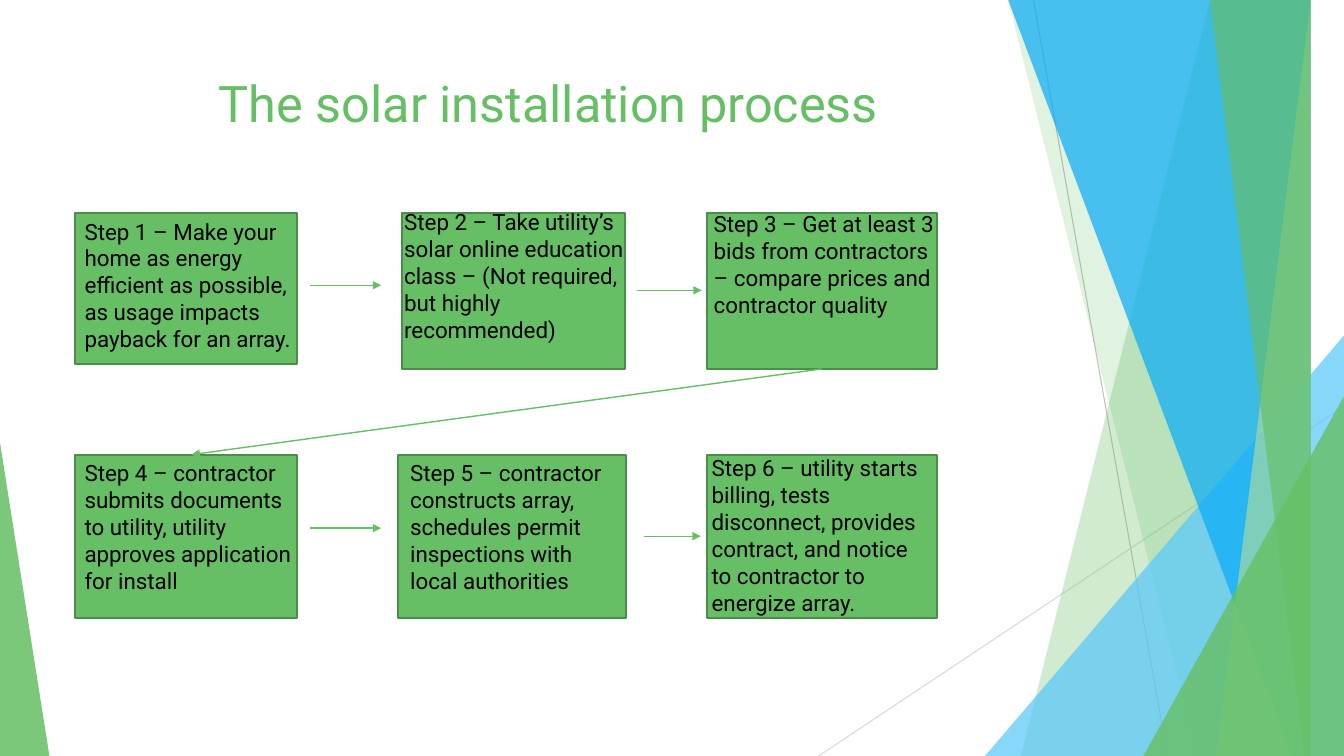
from lxml.etree import SubElement
from pptx import Presentation
from pptx.dml.color import RGBColor
from pptx.enum.shapes import MSO_CONNECTOR, MSO_SHAPE
from pptx.enum.text import MSO_ANCHOR, MSO_AUTO_SIZE, PP_ALIGN
from pptx.oxml.ns import qn
from pptx.util import Inches, Pt

WIDTH, HEIGHT = 13.33, 7.5
GREEN, DARK_GREEN, FONT = "66BF64", "4B8D4A", "Roboto"


def paint(shape, colour, opacity=100):
    """Give a shape a plain, possibly see-through fill without line or shadow."""
    shape.shadow.inherit = False
    shape.fill.solid()
    shape.fill.fore_color.rgb = RGBColor.from_string(colour)
    shape.line.fill.background()
    if opacity < 100:
        tint = shape._element.spPr.find(qn("a:solidFill"))[0]
        SubElement(tint, qn("a:alpha"), val=str(opacity * 1000))


def add_line(start, end, colour, weight, arrow=False):
    points = [Inches(length) for length in start + end]
    line = page.shapes.add_connector(MSO_CONNECTOR.STRAIGHT, *points)
    line.line.color.rgb = RGBColor.from_string(colour)
    line.line.width = Pt(weight)
    if arrow:
        SubElement(line.line._get_or_add_ln(), qn("a:tailEnd"), type="triangle")
    SubElement(line._element.spPr, qn("a:effectLst"))


deck = Presentation()
deck.slide_width, deck.slide_height = Inches(WIDTH), Inches(HEIGHT)
page = deck.slides.add_slide(deck.slide_layouts[5])

# Decoration: thin lines, then bands and triangles from back to front
add_line((10.25, 0), (11.58, HEIGHT), "BFBFBF", 0.75)
add_line((WIDTH, 4.03), (8.12, HEIGHT), "D9D9D9", 0.75)

# A band is (left at top, right at bottom, left at bottom), and its top right is the
# slide corner; a triangle is (left, right, top, apex share), standing on the bottom edge.
facets = [
    (GREEN, 30, (12.28, WIDTH, 10.04)),
    (GREEN, 20, (10.5, WIDTH, 11.83)),
    ("5AC8FA", 72, (9.77, WIDTH, 3.33, 1)),
    ("07ACF8", 70, (10.21, WIDTH, 12.91)),
    ("A3D9A2", 70, (13.03, WIDTH, 11.92)),
    (GREEN, 65, (11.96, WIDTH, 13.18)),
    (GREEN, 80, (11.34, WIDTH, 3.93, 1)),
    (GREEN, 85, (0, 0.49, 4.39, 0)),
]
for colour, opacity, outline in facets:
    if len(outline) == 3:
        top_left, right, bottom_left = outline
        builder = page.shapes.build_freeform(top_left, 0, scale=Inches(1))
        builder.add_line_segments([(right, 0), (right, HEIGHT), (bottom_left, HEIGHT)])
        facet = builder.convert_to_shape()
    else:
        left, right, top, apex = outline
        facet = page.shapes.add_shape(
            MSO_SHAPE.ISOSCELES_TRIANGLE, Inches(left), Inches(top),
            Inches(right - left), Inches(HEIGHT - top))
        facet.adjustments[0] = apex
    paint(facet, colour, opacity)

title = page.shapes.title
title.left, title.top = Inches(0.74), Inches(0.67)
title.width, title.height = Inches(9.4), Inches(1.44)
title.text_frame.text = "The solar installation process"
title.text_frame.auto_size = MSO_AUTO_SIZE.NONE
title.text_frame.vertical_anchor = MSO_ANCHOR.TOP
para = title.text_frame.paragraphs[0]
para.alignment = PP_ALIGN.CENTER
para.font.name, para.font.size = FONT, Pt(36)
para.font.color.rgb = RGBColor.from_string(GREEN)

# Steps: card (left, width, height), label (left, top offset, width, height), text
rows = [
    (2.11, [
        ((0.74, 2.21, 1.5), (0.74, 0, 2.33, 1.45),
         "Make your home as energy efficient as possible, "
         "as usage impacts payback for an array."),
        ((3.99, 2.21, 1.55), (3.91, -0.09, 2.41, 1.45),
         "Take utility’s solar online education class – "
         "(Not required, but highly recommended)"),
        ((7.01, 2.28, 1.55), (6.98, -0.07, 2.39, 1.45),
         "Get at least 3 bids from contractors – "
         "compare prices and contractor quality"),
    ]),
    (4.51, [
        ((0.74, 2.21, 1.62), (0.74, 0, 2.33, 1.45),
         "contractor submits documents to utility, utility approves application "
         "for install"),
        ((3.95, 2.26, 1.62), (3.97, 0, 2.17, 1.45),
         "contractor constructs array, schedules permit inspections "
         "with local authorities"),
        ((7.01, 2.28, 1.62), (6.96, -0.05, 2.39, 1.72),
         "utility starts billing, tests disconnect, provides contract, "
         "and notice to contractor to energize array."),
    ]),
]
number = 0
for top, steps in rows:
    for (left, width, height), (label_left, offset, label_width, label_height), text in steps:
        number += 1
        card = page.shapes.add_shape(MSO_SHAPE.RECTANGLE, Inches(left), Inches(top),
                                     Inches(width), Inches(height))
        paint(card, GREEN)
        card.line.color.rgb = RGBColor.from_string(DARK_GREEN)
        card.line.width = Pt(1.5)

        label = page.shapes.add_textbox(Inches(label_left), Inches(top + offset),
                                        Inches(label_width), Inches(label_height))
        frame = label.text_frame
        frame.word_wrap = True
        frame.auto_size = MSO_AUTO_SIZE.SHAPE_TO_FIT_TEXT
        frame.text = f"Step {number} – {text}"
        para = frame.paragraphs[0]
        para.font.name, para.font.size = FONT, Pt(16)
        para.font.color.rgb = RGBColor.from_string("000000")

arrows = [
    ((3.07, 2.83), (3.78, 2.83)),
    ((6.32, 2.88), (6.96, 2.88)),
    ((8.15, 3.66), (1.9, 4.51)),
    ((3.07, 5.24), (3.78, 5.24)),
    ((6.39, 5.32), (6.95, 5.32)),
]
for start, end in arrows:
    add_line(start, end, GREEN, 1, arrow=True)

deck.save("out.pptx")
